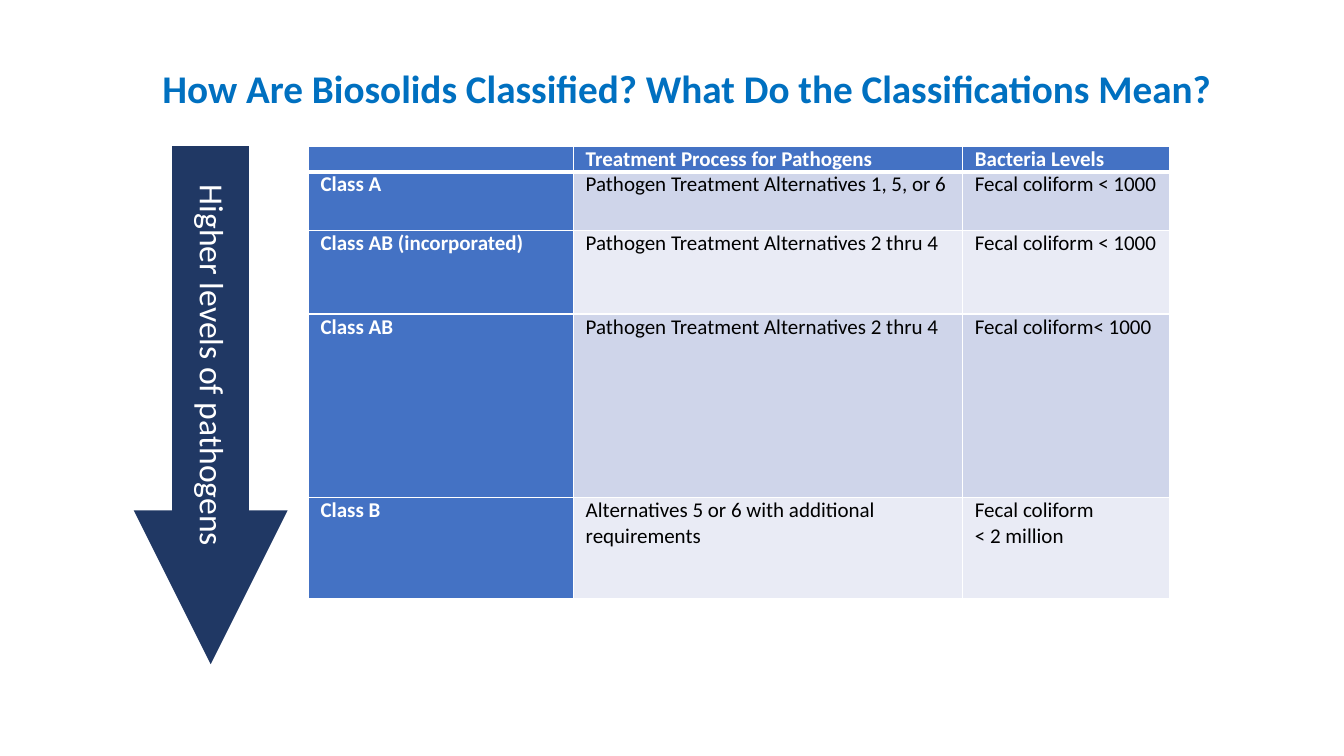
from lxml import etree
from pptx import Presentation
from pptx import util as u
from pptx.dml.color import RGBColor
from pptx.enum import shapes, text
from pptx.oxml.ns import qn

FONT = "Calibri"
TITLE_BLUE = RGBColor(0x00, 0x70, 0xC0)
HEADER_BLUE = RGBColor(0x44, 0x72, 0xC4)
BAND_DARK = RGBColor(0xCF, 0xD5, 0xEA)
BAND_LIGHT = RGBColor(0xE9, 0xEB, 0xF5)
ARROW_NAVY = RGBColor(0x20, 0x38, 0x64)
WHITE = RGBColor(0xFF, 0xFF, 0xFF)
BLACK = RGBColor(0x00, 0x00, 0x00)

COLUMN_WIDTHS = (2.63, 3.86, 2.05)
ROW_HEIGHTS = (0.25, 0.58, 0.83, 1.82, 1)
CLASSES = (
    ("", "Treatment Process for Pathogens", "Bacteria Levels"),
    ("Class A", "Pathogen Treatment Alternatives 1, 5, or 6", "Fecal coliform < 1000"),
    ("Class AB (incorporated)", "Pathogen Treatment Alternatives 2 thru 4",
     "Fecal coliform < 1000"),
    ("Class AB", "Pathogen Treatment Alternatives 2 thru 4", "Fecal coliform< 1000"),
    ("Class B", "Alternatives 5 or 6 with additional requirements",
     "Fecal coliform \v< 2 million"),
)


def write_text(frame, words, size, color, bold=False, align=text.PP_ALIGN.CENTER):
    frame.word_wrap = True
    paragraph = frame.paragraphs[0]
    paragraph.text = words
    paragraph.alignment = align
    for run in paragraph.runs:
        run.font.name = FONT
        run.font.size = u.Pt(size)
        run.font.bold = bold
        run.font.color.rgb = color
    # Line breaks and empty paragraphs carry their own text size
    for line_break in paragraph._p.findall(qn("a:br")):
        etree.SubElement(line_break, qn("a:rPr"), sz=str(size * 100))
    if not words:
        etree.SubElement(paragraph._p, qn("a:endParaRPr"), sz=str(size * 100))


def add_title(slide, left, top, width, height):
    title = slide.shapes.title
    title.left, title.top = u.Inches(left), u.Inches(top)
    title.width, title.height = u.Inches(width), u.Inches(height)
    frame = title.text_frame
    frame.auto_size = text.MSO_AUTO_SIZE.NONE
    frame.vertical_anchor = text.MSO_ANCHOR.TOP
    write_text(frame, "How Are Biosolids Classified? What Do the Classifications Mean?",
               28, TITLE_BLUE, bold=True)


def set_borders(cell, widths):
    properties = cell._tc.get_or_add_tcPr()
    for side, width in zip("LRTB", widths):
        line = etree.SubElement(properties, qn(f"a:ln{side}"), w=str(u.Pt(width)))
        fill = etree.SubElement(line, qn("a:solidFill"))
        etree.SubElement(fill, qn("a:srgbClr"), val=str(WHITE))


def add_class_table(slide, left, top):
    table = slide.shapes.add_table(
        len(ROW_HEIGHTS), len(COLUMN_WIDTHS), u.Inches(left), u.Inches(top),
        u.Inches(sum(COLUMN_WIDTHS)), u.Inches(sum(ROW_HEIGHTS))).table
    for column, width in zip(table.columns, COLUMN_WIDTHS):
        column.width = u.Inches(width)
    for row, height in zip(table.rows, ROW_HEIGHTS):
        row.height = u.Inches(height)

    for r, entries in enumerate(CLASSES):
        for c, words in enumerate(entries):
            cell = table.cell(r, c)
            heading = r == 0 or c == 0
            cell.margin_left, cell.margin_right = u.Inches(0.12), u.Inches(0.07)
            cell.margin_top = cell.margin_bottom = 0
            set_borders(cell, (1, 1, 3 if r == 1 else 1, 3 if r == 0 else 1))
            cell.fill.solid()
            band = BAND_DARK if r % 2 else BAND_LIGHT
            cell.fill.fore_color.rgb = HEADER_BLUE if heading else band
            write_text(cell.text_frame, words, 15, WHITE if heading else BLACK,
                       bold=heading, align=text.PP_ALIGN.LEFT)


def add_pathogen_arrow(slide, center, top, height):
    # Thick arrow pointing down
    arrow = slide.shapes.add_connector(
        shapes.MSO_CONNECTOR.STRAIGHT, u.Inches(center), u.Inches(top),
        u.Inches(center), u.Inches(top + height))
    arrow.line.color.rgb = ARROW_NAVY
    arrow.line.width = u.Pt(55)
    etree.SubElement(arrow.line._get_or_add_ln(), qn("a:tailEnd"),
                     type="triangle", w="sm", len="sm")
    etree.SubElement(arrow._element.spPr, qn("a:effectLst"))

    # Label turned to run along the shaft
    label_width, label_height = 4.21, 0.81
    label = slide.shapes.add_textbox(
        u.Inches(center - 0.13 - label_width / 2), u.Inches(top + 1.77),
        u.Inches(label_width), u.Inches(label_height))
    label.rotation = 90
    write_text(label.text_frame, "Higher levels of pathogens", 24, WHITE)


def main():
    presentation = Presentation()
    presentation.slide_width = u.Inches(13.33)
    presentation.slide_height = u.Inches(7.5)
    slide = presentation.slides.add_slide(presentation.slide_layouts[5])
    add_title(slide, 1.41, 0.59, 10.8, 0.57)
    add_class_table(slide, 3.06, 1.45)
    add_pathogen_arrow(slide, 2.09, 1.45, 5.14)
    presentation.save("out.pptx")


if __name__ == "__main__":
    main()
